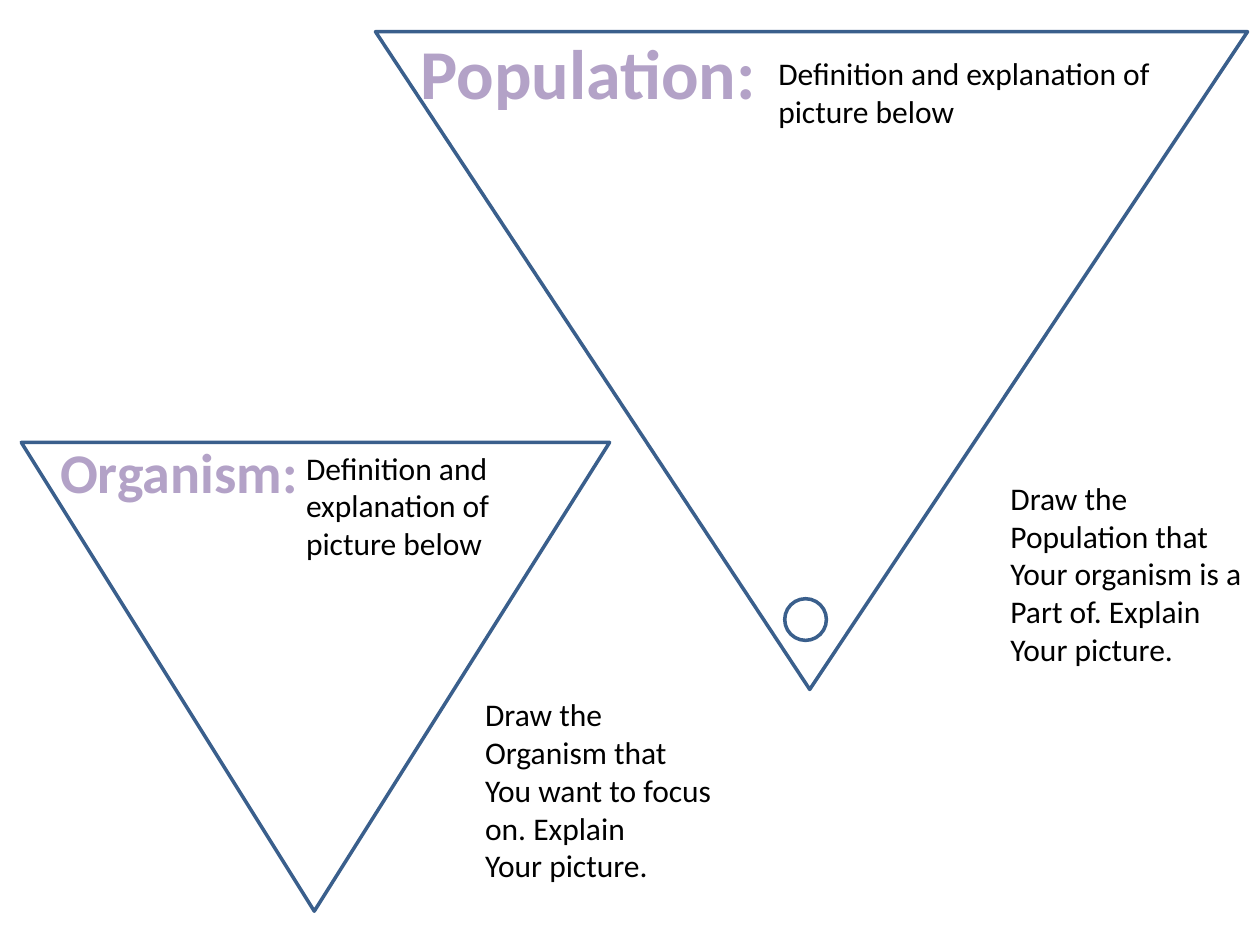
"""Build the organism and population worksheet slide."""
import pptx
import pptx.dml.color
import pptx.enum.shapes
import pptx.enum.text
import pptx.util

Cm, Pt = pptx.util.Cm, pptx.util.Pt
SHAPE = pptx.enum.shapes.MSO_SHAPE
COLORS = {"paper": "FFFFFF", "line": "3A5F8C", "text": "000000", "head": "B3A2C7"}
PROMPT = ["Definition and explanation of picture below"]


def color(name):
    """Return the named colour."""
    return pptx.dml.color.RGBColor.from_string(COLORS[name])


def add_figure(slide, kind, *box):
    """Add a white outlined shape."""
    shape = slide.shapes.add_shape(kind, *map(Cm, box))
    shape.shadow.inherit = False
    shape.fill.solid()
    shape.fill.fore_color.rgb = color("paper")
    shape.line.color.rgb = color("line")
    shape.line.width = Pt(2)
    return shape


def add_funnel(slide, *box):
    """Add a triangle that points down."""
    shape = add_figure(slide, SHAPE.ISOSCELES_TRIANGLE, *box)
    shape.adjustments[0] = 0.498
    shape.element.spPr.xfrm.set("flipV", "1")


def add_text(slide, lines, *box, size=18, tint="text", bold=False, align="LEFT"):
    """Add a wrapped text box with one paragraph per line."""
    shape = slide.shapes.add_textbox(*map(Cm, box))
    frame = shape.text_frame
    frame.word_wrap = True
    frame.auto_size = pptx.enum.text.MSO_AUTO_SIZE.SHAPE_TO_FIT_TEXT
    frame.text = "\n".join(lines)
    for para in frame.paragraphs:
        para.alignment = pptx.enum.text.PP_ALIGN[align]
        para.font.name = "Calibri"
        para.font.size = Pt(size)
        para.font.bold = bold
        para.font.color.rgb = color(tint)


def add_head(slide, text, size, *box):
    """Add a bold centred heading."""
    add_text(slide, [text], *box, size=size, tint="head", bold=True, align="CENTER")


def main():
    """Build and save the slide."""
    deck = pptx.Presentation()
    deck.slide_width, deck.slide_height = Cm(25.4), Cm(19.05)
    slide = deck.slides.add_slide(deck.slide_layouts.get_by_name("Blank"))

    add_funnel(slide, 7.57, 0.64, 17.58, 13.26)
    add_text(slide, PROMPT, 15.44, 0.97, 8.69, 1.8)
    add_text(slide, ["Draw the", "Population that", "Your organism is a",
                     "Part of. Explain", "Your picture."], 20.12, 9.53, 5.28, 4.11)
    add_head(slide, "Population:", 40, 7.82, 0.48, 8.08, 1.96)

    add_text(slide, ["Draw the", "Organism that", "You want to focus on. Explain",
                     "Your picture."], 9.53, 13.89, 5.28, 4.11)
    add_funnel(slide, 0.43, 8.92, 11.86, 9.45)
    add_text(slide, PROMPT, 5.92, 8.92, 5.13, 2.54)
    add_head(slide, "Organism:", 32, -0.43, 8.69, 8.08, 1.63)

    add_figure(slide, SHAPE.OVAL, 15.82, 12.07, 0.84, 0.84)
    deck.save("out.pptx")


if __name__ == "__main__":
    main()
